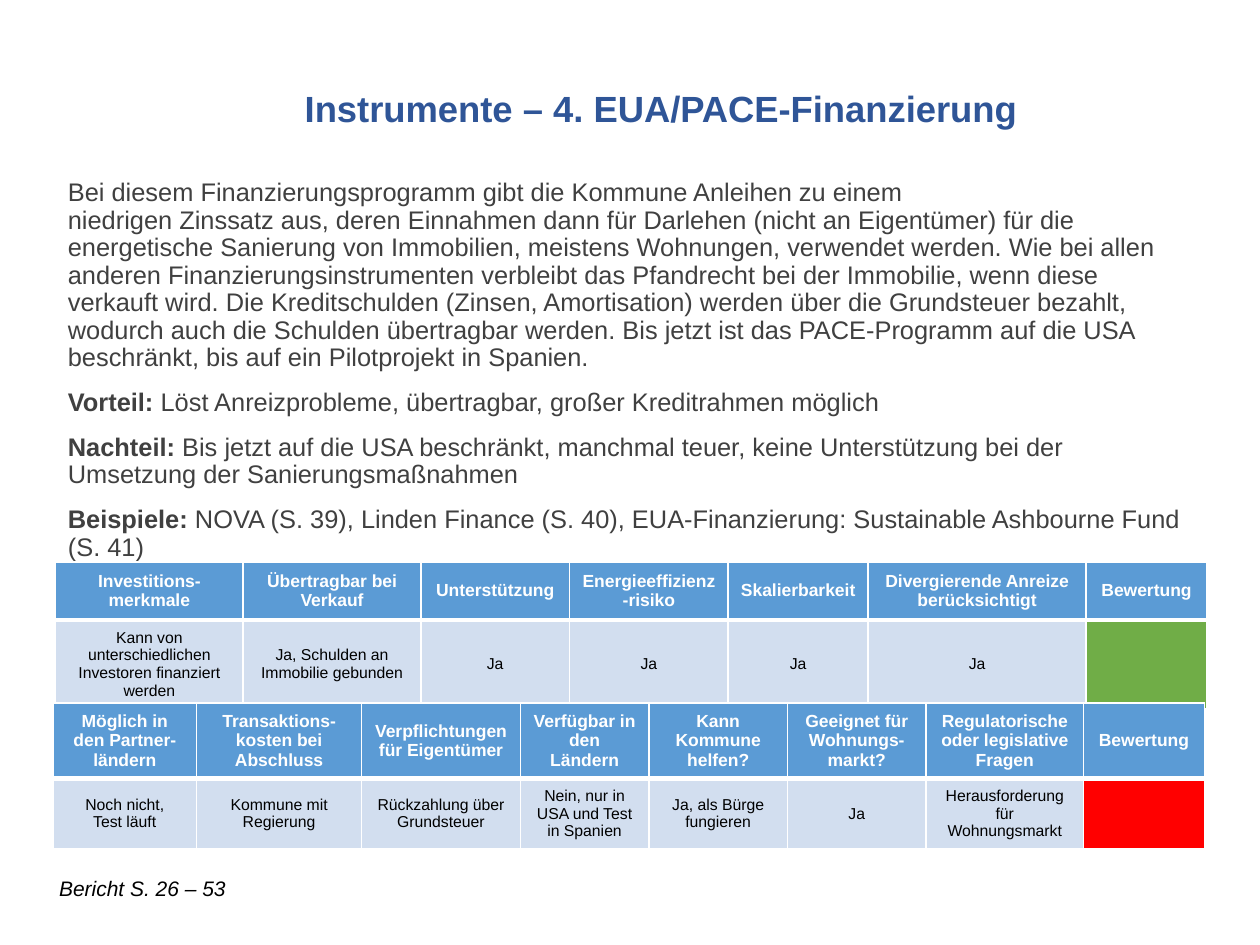
from lxml.etree import SubElement
from pptx import Presentation
from pptx.dml.color import RGBColor
from pptx.enum.text import MSO_ANCHOR, PP_ALIGN
from pptx.oxml.ns import qn
from pptx.util import Inches, Pt

COLS, ROWS = 100, 75
FONT = "Arial"
BLUE, PALE, WHITE, BLACK = "5B9BD5", "D2DEEF", "FFFFFF", "000000"
GREEN, RED, GRAY, NAVY = "70AD47", "FF0000", "404040", "2F5597"

BODY = [
    [("Bei diesem Finanzierungsprogramm gibt die Kommune Anleihen zu einem\n"
      "niedrigen Zinssatz aus, deren Einnahmen dann für Darlehen (nicht an Eigentümer) "
      "für die energetische Sanierung von Immobilien, meistens Wohnungen, verwendet werden. "
      "Wie bei allen anderen Finanzierungsinstrumenten verbleibt das Pfandrecht bei der "
      "Immobilie, wenn diese verkauft wird. Die Kreditschulden (Zinsen, Amortisation) werden "
      "über die Grundsteuer bezahlt, wodurch auch die Schulden übertragbar werden. Bis jetzt "
      "ist das PACE-Programm auf die USA beschränkt, bis auf ein Pilotprojekt in Spanien.",
      False)],
    [("Vorteil:", True),
     (" Löst Anreizprobleme, übertragbar, großer Kreditrahmen möglich", False)],
    [("Nachteil:", True),
     (" Bis jetzt auf die USA beschränkt, manchmal teuer, keine Unterstützung bei der "
      "Umsetzung der Sanierungsmaßnahmen", False)],
    [("Beispiele: ", True),
     ("NOVA (S. 39), Linden Finance (S. 40), EUA-Finanzierung: "
      "Sustainable Ashbourne Fund (S. 41)", False)],
]

MERITS = [
    ("Investitions-merkmale", "Kann von unterschiedlichen Investoren finanziert werden", 14.9),
    ("Übertragbar bei Verkauf", "Ja, Schulden an Immobilie gebunden", 14.1),
    ("Unterstützung", "Ja", 11.8),
    ("Energieeffizienz-risiko", "Ja", 12.6),
    ("Skalierbarkeit", "Ja", 11.1),
    ("Divergierende Anreize berücksichtigt", "Ja", 17.3),
    ("Bewertung", "", 9.6),
]

LIMITS = [
    ("Möglich in den Partner-ländern", "Noch nicht,\nTest läuft", 11.4),
    ("Transaktions-kosten bei Abschluss", "Kommune mit Regierung", 13.1),
    ("Verpflichtungen für Eigentümer", "Rückzahlung über Grundsteuer", 12.6),
    ("Verfügbar in den Ländern", "Nein, nur in USA und Test in Spanien", 10.2),
    ("Kann Kommune helfen?", "Ja, als Bürge fungieren", 11),
    ("Geeignet für Wohnungs-markt?", "Ja", 11),
    ("Regulatorische oder legislative Fragen", "Herausforderung für Wohnungsmarkt", 12.5),
    ("Bewertung", "", 9.6),
]


def grid(*cells):
    """Turn grid steps into slide lengths."""
    return [Inches(n / 10) for n in cells]


def color(code):
    """Turn a hex string into a colour."""
    return RGBColor.from_string(code)


def write(para, text, size, tint, bold=False, slant=False):
    """Add text to a paragraph, one run for each line."""
    for i, line in enumerate(text.split("\n")):
        if i:
            para.add_line_break()
        run = para.add_run()
        run.text = line
        font = run.font
        font.name, font.size, font.bold, font.italic = FONT, Pt(size), bold, slant
        font.color.rgb = color(tint)


def add_text(slide, place, paras, size, tint, pitch=1.0, gap=0, slant=False,
             anchor=MSO_ANCHOR.TOP):
    """Add a wrapped text box made of paragraphs of runs."""
    frame = slide.shapes.add_textbox(*grid(*place)).text_frame
    frame.word_wrap = True
    frame.vertical_anchor = anchor
    for i, runs in enumerate(paras):
        para = frame.add_paragraph() if i else frame.paragraphs[0]
        para.line_spacing = pitch
        para.space_before = Pt(gap if i else 0)
        for text, bold in runs:
            write(para, text, size, tint, bold, slant)


def edge(cell, base):
    """Draw white borders round a cell, with its own bottom width."""
    props = cell._tc.get_or_add_tcPr()
    for side, width in zip("LRTB", (1, 1, 1, base)):
        line = SubElement(props, qn(f"a:ln{side}"), w=str(Pt(width)))
        fill = SubElement(line, qn("a:solidFill"))
        SubElement(fill, qn("a:srgbClr"), val=WHITE)


def fill_cell(cell, text, back, size, tint, bold, base):
    """Style one table cell and write its text."""
    edge(cell, base)
    cell.fill.solid()
    cell.fill.fore_color.rgb = color(back)
    cell.vertical_anchor = MSO_ANCHOR.MIDDLE
    para = cell.text_frame.paragraphs[0]
    para.alignment = PP_ALIGN.CENTER
    if text:
        write(para, text, size, tint, bold)


def add_grade(slide, left, top, heights, items, mark):
    """Add a table of criteria that ends in a coloured rating."""
    width = sum(item[2] for item in items)
    place = grid(left, top, width, sum(heights))
    table = slide.shapes.add_table(2, len(items), *place).table
    for row, height in zip(table.rows, grid(*heights)):
        row.height = height
    for i, (head, answer, span) in enumerate(items):
        table.columns[i].width = grid(span)[0]
        fill_cell(table.cell(0, i), head, BLUE, 10, WHITE, True, 3)
        fill_cell(table.cell(1, i), answer, PALE if answer else mark, 9, BLACK, False, 1)


def main():
    """Build and save the slide."""
    deck = Presentation()
    deck.slide_width, deck.slide_height = grid(COLS, ROWS)
    slide = deck.slides.add_slide(deck.slide_layouts[6])
    add_text(slide, (4.4, 13.8, 91.5, 46.1), BODY, 14.5, GRAY, pitch=0.9, gap=10)
    add_text(slide, (23.2, 6, 62.8, 5.6),
             [[("Instrumente – 4. EUA/PACE-Finanzierung", True)]], 20.8, NAVY,
             pitch=0.9, anchor=MSO_ANCHOR.MIDDLE)
    add_text(slide, (3.7, 69, 23.2, 3), [[("Bericht S. 26 – 53", False)]], 12, BLACK,
             slant=True)
    add_grade(slide, 4.4, 44.6, (4.6, 6.6), MERITS, GREEN)
    add_grade(slide, 4.2, 55.8, (6, 5.5), LIMITS, RED)
    deck.save("out.pptx")


if __name__ == "__main__":
    main()
